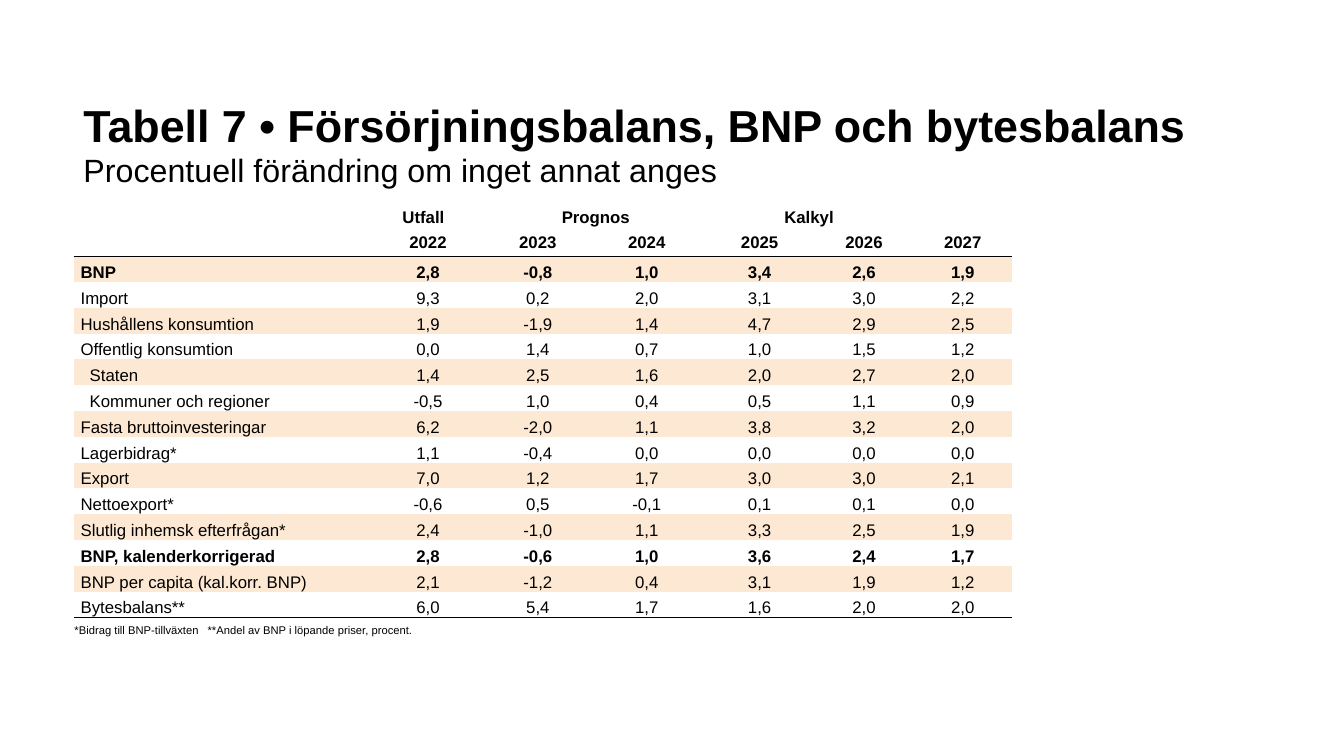
"""Build the slide with table 7: supply balance, GDP and current account."""
from dataclasses import dataclass

from lxml.etree import SubElement
from pptx import Presentation
from pptx.dml.color import RGBColor
from pptx.enum.text import MSO_ANCHOR, MSO_AUTO_SIZE, PP_ALIGN
from pptx.oxml import parse_xml
from pptx.oxml.ns import nsdecls, qn
from pptx.util import Inches, Pt

TITLE = "Tabell 7 • Försörjningsbalans, BNP och bytesbalans"
SUBTITLE = "Procentuell förändring om inget annat anges"
NOTES = ("*Bidrag till BNP-tillväxten", "**Andel av BNP i löpande priser, procent.")
GROUPS = ["", "Utfall", "Prognos", "", "Kalkyl", "", ""]
YEARS = ["", "2022", "2023", "2024", "2025", "2026", "2027"]
DATA = [
    ("BNP", "2,8 -0,8 1,0 3,4 2,6 1,9"),
    ("Import", "9,3 0,2 2,0 3,1 3,0 2,2"),
    ("Hushållens konsumtion", "1,9 -1,9 1,4 4,7 2,9 2,5"),
    ("Offentlig konsumtion", "0,0 1,4 0,7 1,0 1,5 1,2"),
    ("Staten", "1,4 2,5 1,6 2,0 2,7 2,0"),
    ("Kommuner och regioner", "-0,5 1,0 0,4 0,5 1,1 0,9"),
    ("Fasta bruttoinvesteringar", "6,2 -2,0 1,1 3,8 3,2 2,0"),
    ("Lagerbidrag*", "1,1 -0,4 0,0 0,0 0,0 0,0"),
    ("Export", "7,0 1,2 1,7 3,0 3,0 2,1"),
    ("Nettoexport*", "-0,6 0,5 -0,1 0,1 0,1 0,0"),
    ("Slutlig inhemsk efterfrågan*", "2,4 -1,0 1,1 3,3 2,5 1,9"),
    ("BNP, kalenderkorrigerad", "2,8 -0,6 1,0 3,6 2,4 1,7"),
    ("BNP per capita (kal.korr. BNP)", "2,1 -1,2 0,4 3,1 1,9 1,2"),
    ("Bytesbalans**", "6,0 5,4 1,7 1,6 2,0 2,0"),
]
BOLD = {"BNP", "BNP, kalenderkorrigerad"}
SUBS = {"Staten", "Kommuner och regioner"}
WIDTHS = [2.93, 1.17, 1.01, 1.15, 1.09, 0.98, 0.98]
SPANS = (2, 4)
HEADS = 2
LEFT, TOP, HIGH = 0.73, 2.03, 4.1
PAD, INDENT = 0.07, 0.09
NO_STYLE = "{2D5ABB26-0587-4C30-8999-92F81FD0307C}"


@dataclass(frozen=True)
class Theme:
    """Colours, font and type sizes."""
    ink: str = "000000"
    band: str = "FDE9D3"
    font: str = "Arial"
    title: int = 32
    sub: int = 23
    body: int = 12
    note: int = 8


THEME = Theme()


def add_run(para, text, size, bold=False):
    """Add one styled run."""
    run = para.add_run()
    run.text = text
    font = run.font
    font.name, font.size, font.bold = THEME.font, Pt(size), bold
    font.color.rgb = RGBColor.from_string(THEME.ink)


def add_rule(cell):
    """Draw a line along the bottom of a cell."""
    cell._tc.get_or_add_tcPr().insert(0, parse_xml(
        f'<a:lnB {nsdecls("a")} w="12700"><a:solidFill>'
        f'<a:srgbClr val="{THEME.ink}"/></a:solidFill></a:lnB>'))


def fill_cell(cell, text, row, col, bold):
    """Set text, spacing and fill of a cell."""
    head = row < HEADS
    cell.margin_left = Inches(PAD + INDENT * (text in SUBS))
    cell.margin_right = Inches(PAD + INDENT * (text == "Utfall"))
    cell.margin_top = cell.margin_bottom = 0
    cell.vertical_anchor = MSO_ANCHOR.MIDDLE if head else MSO_ANCHOR.BOTTOM
    para = cell.text_frame.paragraphs[0]
    para.alignment = PP_ALIGN.CENTER if col else PP_ALIGN.LEFT
    para.line_spacing = Pt(13)
    para.space_before = para.space_after = Pt(1)
    if text:
        add_run(para, text, THEME.body, bold)
    else:
        SubElement(para._p, qn("a:endParaRPr"), sz=str(THEME.body * 100))
    if head or row % 2:
        cell.fill.background()
    else:
        cell.fill.solid()
        cell.fill.fore_color.rgb = RGBColor.from_string(THEME.band)


def add_title(slide):
    """Add the heading and its second line."""
    box = slide.shapes.add_textbox(Inches(LEFT), Inches(0.96), Inches(11.5), Inches(1.35))
    frame = box.text_frame
    frame.word_wrap = True
    frame.margin_top = Inches(0.05)
    para = frame.paragraphs[0]
    para.line_spacing = 0.95
    add_run(para, TITLE, THEME.title, True)
    para.add_line_break()
    add_run(para, SUBTITLE, THEME.sub)


def add_grid(slide):
    """Add the table."""
    rows = [GROUPS, YEARS] + [[name, *nums.split()] for name, nums in DATA]
    table = slide.shapes.add_table(
        len(rows), len(WIDTHS), Inches(LEFT), Inches(TOP),
        Inches(sum(WIDTHS)), Inches(HIGH)).table
    table.first_row = table.horz_banding = False
    table._tbl.tblPr.find(qn("a:tableStyleId")).text = NO_STYLE
    for col, wide in zip(table.columns, WIDTHS):
        col.width = Inches(wide)
    for line in table.rows:
        line.height = Inches(HIGH / len(rows))
    ruled = (HEADS - 1, len(rows) - 1)
    for r, texts in enumerate(rows):
        bold = r < HEADS or texts[0] in BOLD
        for c, text in enumerate(texts):
            cell = table.cell(r, c)
            fill_cell(cell, text, r, c, bold)
            if r in ruled:
                add_rule(cell)
    for c in SPANS:
        table.cell(0, c).merge(table.cell(0, c + 1))


def add_note(slide):
    """Add the footnotes on one line, set apart by a tab."""
    box = slide.shapes.add_textbox(Inches(0.64), Inches(6.13), Inches(3.65), Inches(0.24))
    frame = box.text_frame
    frame.word_wrap = False
    frame.auto_size = MSO_AUTO_SIZE.SHAPE_TO_FIT_TEXT
    para = frame.paragraphs[0]
    tabs = SubElement(para._p.get_or_add_pPr(), qn("a:tabLst"))
    SubElement(tabs, qn("a:tab"), pos=str(Inches(1.32)), algn="l")
    add_run(para, "\t".join(NOTES), THEME.note)


def main():
    """Make and save the deck."""
    deck = Presentation()
    deck.slide_width, deck.slide_height = Inches(13.33), Inches(7.5)
    slide = deck.slides.add_slide(deck.slide_layouts[6])
    add_title(slide)
    add_grid(slide)
    add_note(slide)
    deck.save("out.pptx")


if __name__ == "__main__":
    main()
